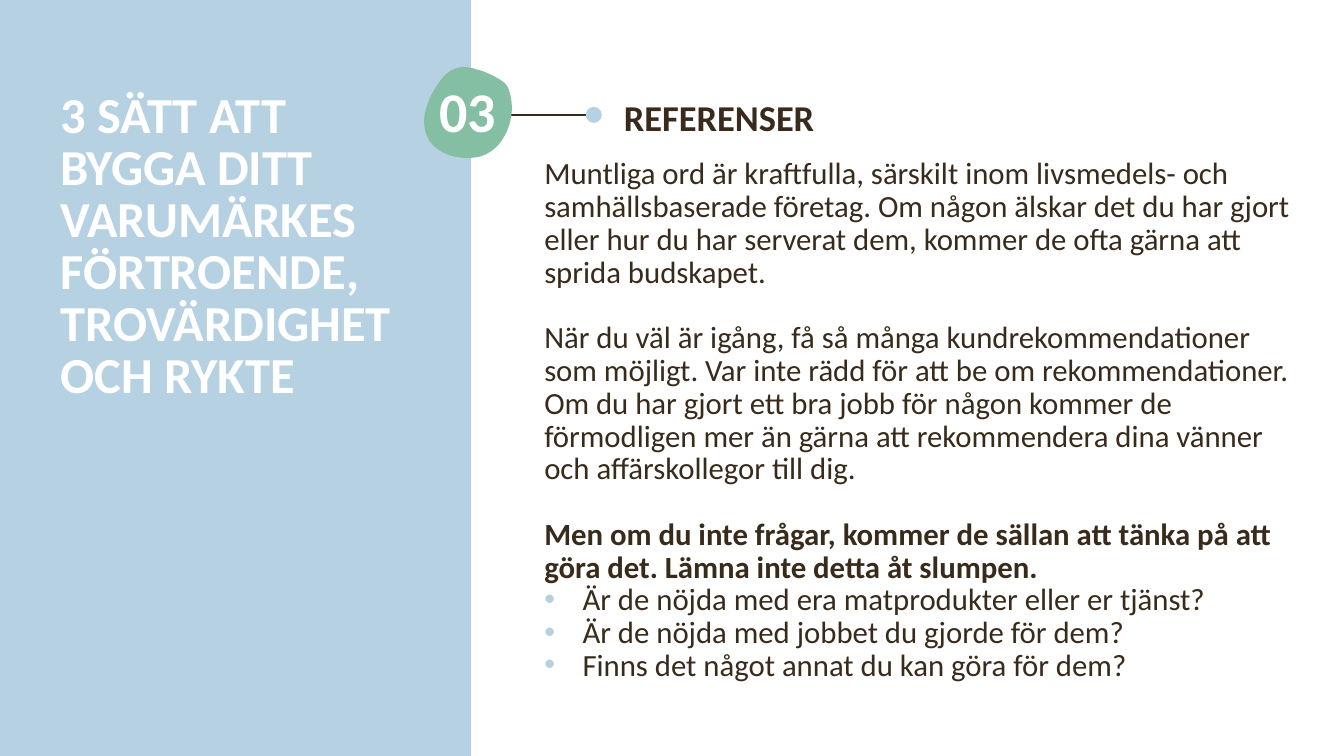
import pptx
import pptx.util
import pptx.dml.color
import pptx.enum.shapes
import pptx.enum.text
import pptx.oxml
import pptx.oxml.ns

Inches = pptx.util.Inches
Pt = pptx.util.Pt
SHAPES = pptx.enum.shapes.MSO_SHAPE

COLORS = {"sky": "B6D1E1", "green": "84BFA4", "brown": "382B1B", "white": "FFFFFF"}
FONT = "Calibri"

TITLE = "3 SÄTT ATT BYGGA DITT VARUMÄRKES FÖRTROENDE, TROVÄRDIGHET OCH RYKTE"
NUMBER = "03"
HEADING = "REFERENSER"
ADVICE = [
    {"text": "Muntliga ord är kraftfulla, särskilt inom livsmedels- och samhällsbaserade företag. "
             "Om någon älskar det du har gjort eller hur du har serverat dem, kommer de ofta "
             "gärna att sprida budskapet."},
    {"text": "När du väl är igång, få så många kundrekommendationer som möjligt. Var inte rädd "
             "för att be om rekommendationer. Om du har gjort ett bra jobb för någon kommer de "
             "förmodligen mer än gärna att rekommendera dina vänner och affärskollegor till dig.",
     "before": 23.4},
    {"text": "Men om du inte frågar, kommer de sällan att tänka på att göra det. "
             "Lämna inte detta åt slumpen.", "before": 23.4, "bold": True},
    {"text": "Är de nöjda med era matprodukter eller er tjänst?", "bullet": True},
    {"text": "Är de nöjda med jobbet du gjorde för dem?", "bullet": True},
    {"text": "Finns det något annat du kan göra för dem?", "bullet": True},
]

BLOB_START = (4.73, 0.69)
BLOB_CURVES = [
    ((4.62, 0.65), (4.5, 0.65), (4.4, 0.76)),
    ((4.31, 0.86), (4.23, 1.02), (4.21, 1.15)),
    ((4.17, 1.46), (4.45, 1.6), (4.73, 1.56)),
    ((5, 1.51), (5.14, 1.16), (5.05, 0.9)),
    ((5.03, 0.82), (4.96, 0.79), (4.89, 0.75)),
    ((4.84, 0.73), (4.79, 0.7), (4.73, 0.69)),
]
CURVE_STEPS = 16
AXIS_Y = 1.14
DOT_SIZE = 0.16


def rgb(color):
    return pptx.dml.color.RGBColor.from_string(COLORS[color])


def paint(shape, color):
    shape.shadow.inherit = False
    shape.fill.solid()
    shape.fill.fore_color.rgb = rgb(color)
    shape.line.fill.background()


def add_bullet(paragraph):
    properties = paragraph._p.get_or_add_pPr()
    properties.set("marL", str(Inches(0.38)))
    properties.set("indent", str(-Inches(0.38)))
    namespace = pptx.oxml.ns.nsdecls("a")
    for xml in (
        f'<a:buClr {namespace}><a:srgbClr val="{COLORS["sky"]}"/></a:buClr>',
        f'<a:buFont {namespace} typeface="Arial"/>',
        f'<a:buChar {namespace} char="•"/>',
    ):
        properties.append(pptx.oxml.parse_xml(xml))


def add_text(slide, box, paragraphs, size, color, spacing=None, align=None):
    frame = slide.shapes.add_textbox(*map(Inches, box)).text_frame
    frame.word_wrap = True
    for index, content in enumerate(paragraphs):
        paragraph = frame.paragraphs[0] if index == 0 else frame.add_paragraph()
        if content.get("bullet"):
            add_bullet(paragraph)
        if spacing:
            paragraph.line_spacing = spacing
        if align:
            paragraph.alignment = align
        if "before" in content:
            paragraph.space_before = Pt(content["before"])
        run = paragraph.add_run()
        run.text = content["text"]
        run.font.name = FONT
        run.font.size = Pt(size)
        run.font.bold = content.get("bold", False)
        run.font.color.rgb = rgb(color)
    return frame


def blob_points():
    start, points = BLOB_START, []
    for first, second, end in BLOB_CURVES:
        for step in range(1, CURVE_STEPS + 1):
            t = step / CURVE_STEPS
            u = 1 - t
            points.append(tuple(
                Inches(u**3 * a + 3 * u * u * t * b + 3 * u * t * t * c + t**3 * d)
                for a, b, c, d in zip(start, first, second, end)))
        start = end
    return points


def main():
    deck = pptx.Presentation()
    deck.slide_width, deck.slide_height = Inches(13.33), Inches(7.5)
    slide = deck.slides.add_slide(deck.slide_layouts[6])

    panel = slide.shapes.add_shape(SHAPES.RECTANGLE, 0, 0, Inches(4.67), deck.slide_height)
    paint(panel, "sky")

    stem = slide.shapes.add_connector(
        pptx.enum.shapes.MSO_CONNECTOR.STRAIGHT,
        Inches(5.86), Inches(AXIS_Y), Inches(4.53), Inches(AXIS_Y))
    stem.line.color.rgb = rgb("brown")
    stem.line.width = Pt(1.5)
    stem._element.spPr.append(
        pptx.oxml.parse_xml(f'<a:effectLst {pptx.oxml.ns.nsdecls("a")}/>'))

    dot = slide.shapes.add_shape(
        SHAPES.OVAL, Inches(5.81), Inches(AXIS_Y - DOT_SIZE / 2),
        Inches(DOT_SIZE), Inches(DOT_SIZE))
    paint(dot, "sky")

    outline = slide.shapes.build_freeform(*map(Inches, BLOB_START))
    outline.add_line_segments(blob_points(), close=True)
    paint(outline.convert_to_shape(), "green")

    add_text(slide, (4.15, 0.79, 0.98, 0.59), [{"text": NUMBER, "bold": True}], 40, "white",
             0.9, pptx.enum.text.PP_ALIGN.CENTER)
    heading = add_text(slide, (6.09, 0.89, 6.67, 0.54),
                       [{"text": HEADING, "bold": True}], 26, "brown")
    heading.auto_size = pptx.enum.text.MSO_AUTO_SIZE.SHAPE_TO_FIT_TEXT
    add_text(slide, (0.5, 0.86, 3.65, 2.11), [{"text": TITLE, "bold": True}], 36, "white", Pt(37.2))
    add_text(slide, (5.3, 1.52, 7.6, 5.47), ADVICE, 22, "brown", Pt(23.4))

    deck.save("out.pptx")


if __name__ == "__main__":
    main()
